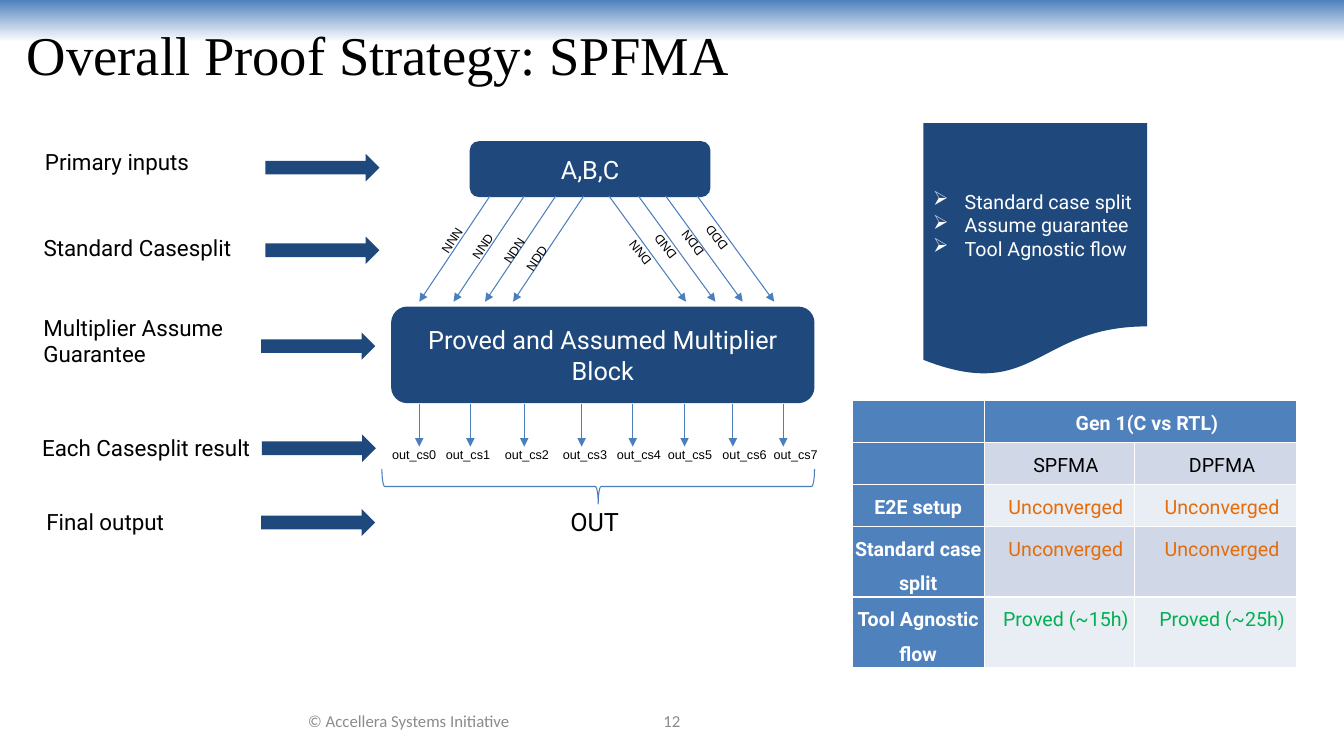
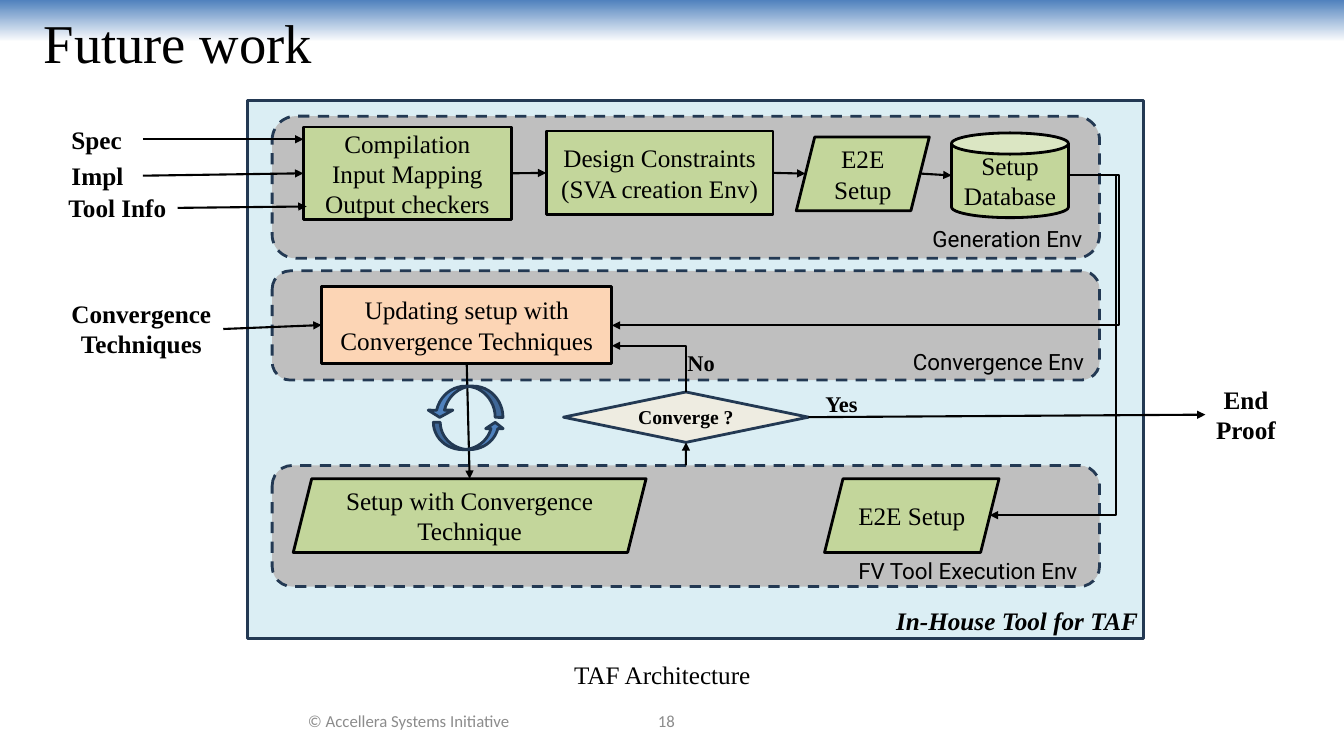
"""Build two slides on a proof strategy and its tool architecture."""
from lxml.etree import SubElement
from pptx import Presentation
from pptx.dml.color import RGBColor
from pptx.enum.dml import MSO_LINE
from pptx.enum.shapes import MSO_CONNECTOR as LINK, MSO_SHAPE as SHAPE
from pptx.enum.text import MSO_ANCHOR as ANCHOR, PP_ALIGN as ALIGN
from pptx.oxml.ns import qn
from pptx.util import Pt

NAVY, BLUE, EDGE, SLATE = "1F497D", "4F81BD", "4B7EBC", "233953"
WHITE, BLACK, GRAY, SILVER = "FFFFFF", "000000", "8C8C8C", "BFBFBF"
GREEN, PEACH, SKY, CREAM = "C3D69B", "FCD5B5", "DBEEF4", "EEECE1"
PALE, PALER, ORANGE, PROVED = "D0D8E8", "E9EDF4", "E46C0A", "00B050"
SANS, SERIF = "Roboto", "Times New Roman"
rgb = RGBColor.from_string


def add_box(slide, kind, place, lines=(), size=18, font=SANS, color=BLACK, bold=False,
            italic=False, fill=None, line=None, weight=2, align=ALIGN.LEFT, anchor=ANCHOR.MIDDLE):
    place = [Pt(length) for length in place]
    if kind is None:
        box = slide.shapes.add_textbox(*place)
    else:
        box = slide.shapes.add_shape(kind, *place)
        box.shadow.inherit = False
        if fill:
            box.fill.solid()
            box.fill.fore_color.rgb = rgb(fill)
        else:
            box.fill.background()
        if line:
            box.line.color.rgb = rgb(line)
            box.line.width = Pt(weight)
        else:
            box.line.fill.background()
    frame = box.text_frame
    frame.word_wrap = True
    frame.vertical_anchor = anchor
    for number, text in enumerate(lines):
        paragraph = frame.add_paragraph() if number else frame.paragraphs[0]
        paragraph.alignment = align
        run = paragraph.add_run()
        run.text = text
        run.font.name, run.font.size = font, Pt(size)
        run.font.bold, run.font.italic = bold, italic
        run.font.color.rgb = rgb(color)
    return box


def add_arrow(slide, start, end, color=BLACK, width=1.5, bend=None):
    joins = [hasattr(tip[0], "shape_id") for tip in (start, end)]
    ends = [Pt(v) for tip, join in zip((start, end), joins) for v in ((0, 0) if join else tip)]
    arrow = slide.shapes.add_connector(LINK.STRAIGHT if bend is None else LINK.ELBOW, *ends)
    if joins[0]:
        arrow.begin_connect(*start)
    if joins[1]:
        arrow.end_connect(*end)
    arrow.line.color.rgb = rgb(color)
    arrow.line.width = Pt(width)
    properties = arrow.element.spPr
    SubElement(properties.find(qn("a:ln")), qn("a:tailEnd"), type="triangle")
    SubElement(properties, qn("a:effectLst"))
    if bend is not None:
        guides = properties.find(qn("a:prstGeom")).get_or_add_avLst()
        SubElement(guides, qn("a:gd"), name="adj1", fmla=f"val {round(bend * 100000)}")


deck = Presentation()
deck.slide_width, deck.slide_height = Pt(960), Pt(540)
slides = []
for heading, title_place, page, page_left in (
        ("Overall Proof Strategy: SPFMA", (12, 11, 864, 55), "12", 388),
        ("Future work", (24, -15, 864, 90), "18", 384)):
    slide = deck.slides.add_slide(deck.slide_layouts[5])
    title = slide.shapes.title
    title.left, title.top, title.width, title.height = [Pt(v) for v in title_place]
    title.text_frame.vertical_anchor = ANCHOR.MIDDLE
    paragraph = title.text_frame.paragraphs[0]
    paragraph.alignment = ALIGN.LEFT
    run = paragraph.add_run()
    run.text = heading
    run.font.name, run.font.size = SERIF, Pt(39)
    run.font.color.rgb = rgb(BLACK)
    for place, text in (((176, 500, 232, 29), "© Accellera Systems Initiative"),
                        ((page_left, 500, 184, 29), page)):
        add_box(slide, None, place, [text], 12, "Calibri", GRAY, align=ALIGN.CENTER)
    slides.append(slide)
strategy, future = slides

band = add_box(strategy, SHAPE.RECTANGLE, (0, 0, 960, 30))
band.fill.gradient()
band.fill.gradient_angle = 270
for stop, color in zip(band.fill.gradient_stops, (BLUE, WHITE)):
    stop.color.rgb = rgb(color)
band.element.nvSpPr.cNvPr.set("id", "20")
deck.slide_master.shapes.element.insert(2, band.element)

for place, text in (((335.5, 100.8, 172, 40), "A,B,C"),
                    ((279.4, 219, 302.4, 69), "Proved and Assumed Multiplier Block")):
    add_box(strategy, SHAPE.FLOWCHART_ALTERNATE_PROCESS, place, [text], color=WHITE,
            fill=NAVY, align=ALIGN.CENTER)

for case, start, left, top in (
        ("NNN", 350, 304, 159), ("NND", 374.5, 326, 163.5),
        ("NDN", 397, 348.5, 166.5), ("NDD", 417, 364.5, 172),
        ("DNN", 435, 433.5, 168.5), ("DND", 456, 451.5, 164),
        ("DDN", 475.5, 471, 161.5), ("DDD", 498, 488, 157.5)):
    positive = case[0] == "N"
    add_arrow(strategy, (start, 140), (start + (-50.5 if positive else 55), 215.5), EDGE, 0.75)
    label = add_box(strategy, None, (left, top, 42, 18), [case], 9, "Arial", anchor=ANCHOR.TOP)
    label.rotation = 303.4 if positive else 231.9

for stage, left, top, width, height, arrow_left, arrow_top in (
        ("Primary inputs", 25, 102, 140, 27, 189.5, 110),
        ("Standard Casesplit", 24, 163.5, 167, 27, 189.5, 169),
        ("Multiplier Assume Guarantee", 24, 220.5, 160, 46, 186.5, 237.5),
        ("Each Casesplit result", 23, 306.5, 190, 27, 187, 310.5),
        ("Final output", 26, 359.5, 118, 27, 186.5, 363.5)):
    add_box(strategy, SHAPE.RIGHT_ARROW, (arrow_left, arrow_top, 81.5, 19.5), fill=NAVY)
    add_box(strategy, None, (left, top, width, height), [stage], 16, anchor=ANCHOR.TOP)

for x in (299.5, 336, 374.5, 415.5, 452, 489, 523.5, 559.5):
    add_arrow(strategy, (x, 288.5), (x, 319), EDGE, 0.75)
results = add_box(strategy, None, (273, 316, 343, 18),
                  ["\t".join(f"out_cs{number}" for number in range(8))], 9, "Arial",
                  anchor=ANCHOR.TOP)
tabs = SubElement(results.text_frame.paragraphs[0]._p.get_or_add_pPr(), qn("a:tabLst"))
for stop in (38.5, 80.5, 122, 160.5, 197, 236, 272.5):
    SubElement(tabs, qn("a:tab"), pos=str(Pt(stop)), algn="l")
brace = add_box(strategy, SHAPE.LEFT_BRACE, (414.8, 193, 25, 309), line=EDGE, weight=0.75)
brace.rotation = 270
add_box(strategy, None, (400.3, 358, 100, 29), ["OUT"], anchor=ANCHOR.TOP)

flow = add_box(strategy, SHAPE.FLOWCHART_DOCUMENT, (659.5, 88, 160, 181),
               ["Standard case split", "Assume guarantee", "Tool Agnostic flow"],
               14, color=WHITE, fill=NAVY)
for paragraph in flow.text_frame.paragraphs:
    properties = paragraph._p.get_or_add_pPr()
    properties.set("marL", str(Pt(22.5)))
    properties.set("indent", str(Pt(-22.5)))
    SubElement(properties, qn("a:buChar"), char="➢")

outcomes = (
    (("", WHITE, BLUE), ("Gen 1(C vs RTL)", WHITE, BLUE), ("", WHITE, BLUE)),
    (("", WHITE, BLUE), ("SPFMA", BLACK, PALE), ("DPFMA", BLACK, PALE)),
    (("E2E setup", WHITE, BLUE), ("Unconverged", ORANGE, PALER), ("Unconverged", ORANGE, PALER)),
    (("Standard case split", WHITE, BLUE), ("Unconverged", ORANGE, PALE),
     ("Unconverged", ORANGE, PALE)),
    (("Tool Agnostic flow", WHITE, BLUE), ("Proved (~15h)", PROVED, PALER),
     ("Proved (~25h)", PROVED, PALER)))
table = strategy.shapes.add_table(5, 3, Pt(608.7), Pt(286), Pt(317.5), Pt(190)).table
table.horz_banding = False
for column, width in zip(table.columns, (94.3, 107.3, 115.9)):
    column.width = Pt(width)
for row, height in zip(table.rows, (30, 30, 30, 50, 50)):
    row.height = Pt(height)
table.cell(0, 1).merge(table.cell(0, 2))
for row, entries in enumerate(outcomes):
    for column, (text, color, fill) in enumerate(entries):
        cell = table.cell(row, column)
        cell.fill.solid()
        cell.fill.fore_color.rgb = rgb(fill)
        if not text:
            continue
        cell.margin_left = cell.margin_right = cell.margin_top = cell.margin_bottom = 0
        paragraph = cell.text_frame.paragraphs[0]
        paragraph.alignment = ALIGN.CENTER
        paragraph.line_spacing = 1.5
        if column:
            paragraph._p.get_or_add_pPr().set("indent", str(Pt(9.4)))
        run = paragraph.add_run()
        run.text = text
        run.font.name, run.font.size = SANS, Pt(14)
        run.font.bold = color == WHITE
        run.font.color.rgb = rgb(color)

add_box(future, SHAPE.RECTANGLE, (177, 72, 640, 384), fill=SKY, line=SLATE)
for name, top, height, left, label_top in (
        ("Generation Env", 83, 101.5, 659, 157), ("Convergence Env", 193.5, 78, 645, 245),
        ("FV Tool Execution Env", 332.5, 86.5, 606, 394.5)):
    environment = add_box(future, SHAPE.ROUNDED_RECTANGLE, (194.4, top, 591, height),
                          fill=SILVER, line=SLATE)
    environment.line.dash_style = MSO_LINE.DASH
    add_box(future, None, (left, label_top, 189, 27), [name], 16, anchor=ANCHOR.TOP)

compilation, constraints, setup, database, updating, technique, execution = [
    add_box(future, kind, place, lines, font=SERIF, fill=fill, line=BLACK, align=ALIGN.CENTER)
    for kind, place, lines, fill in (
        (SHAPE.RECTANGLE, (216.7, 90.7, 148.5, 66.2),
         ["Compilation", "Input Mapping", "Output checkers"], GREEN),
        (SHAPE.RECTANGLE, (390.2, 93.6, 162, 59.8),
         ["Design Constraints", "(SVA creation Env)"], GREEN),
        (SHAPE.PARALLELOGRAM, (568.8, 97.9, 95, 52.6), ["E2E Setup"], GREEN),
        (SHAPE.CAN, (679.7, 95, 83.5, 60.5), ["Setup Database"], GREEN),
        (SHAPE.RECTANGLE, (229.7, 204.5, 207.4, 55.4),
         ["Updating setup with Convergence Techniques"], PEACH),
        (SHAPE.PARALLELOGRAM, (209.5, 342, 252, 52.6),
         ["Setup with Convergence Technique"], GREEN),
        (SHAPE.PARALLELOGRAM, (589, 342, 124.6, 52.6), ["E2E Setup"], GREEN))]
decision = add_box(future, SHAPE.FLOWCHART_DECISION, (402.5, 280, 175, 36), ["Converge ?"], 14,
                   SERIF, bold=True, fill=CREAM, line=SLATE, align=ALIGN.CENTER)

spec, impl, tool_info, techniques, proof, no, yes = [
    add_box(future, None, place, lines, size, SERIF, bold=True, align=align, anchor=ANCHOR.TOP)
    for place, lines, size, align in (
        ((44, 85, 58, 29), ["Spec"], 18, ALIGN.LEFT),
        ((44, 111, 58, 29), ["Impl"], 18, ALIGN.LEFT),
        ((41.8, 134, 85, 29), ["Tool Info"], 18, ALIGN.LEFT),
        ((42.5, 209.5, 117, 51), ["Convergence Techniques"], 18, ALIGN.CENTER),
        ((861, 270.7, 58, 51), ["End", "Proof"], 18, ALIGN.CENTER),
        ((484, 245.5, 45, 27), ["No"], 16, ALIGN.LEFT),
        ((582.5, 275, 45, 27), ["Yes"], 16, ALIGN.LEFT))]
add_box(future, None, (633, 428.5, 240, 29), ["In-House Tool for TAF"], font=SERIF, bold=True,
        italic=True, anchor=ANCHOR.TOP)
add_box(future, None, (403, 467.3, 162, 29), ["TAF Architecture"], font=SERIF, anchor=ANCHOR.TOP)

for start, end in (
        ((spec, 3), (216.7, 99.5)), ((impl, 3), (compilation, 1)),
        ((tool_info, 3), (219, 147.5)), ((techniques, 3), (updating, 1)),
        ((compilation, 3), (constraints, 1)), ((constraints, 3), (575.3, 124)),
        ((657.4, 124), (679.7, 125.3)), ((updating, 2), (335.5, 342)),
        ((environment, 0), (decision, 2)), ((decision, 3), (proof, 1))):
    add_arrow(future, start, end)
for start, end, bend in (((763.2, 125.3), (437.1, 232.5), -0.11),
                         ((763.2, 125.3), (707, 368), -0.61),
                         ((490, 280), (437.1, 247), 0)):
    add_arrow(future, start, end, bend=bend)

for kind, place, bends, flipped in (
        (SHAPE.CURVED_UP_ARROW, (309.6, 301.7, 50.4, 19.5), (0.25, 0.64, 0.23), False),
        (SHAPE.CURVED_DOWN_ARROW, (305.3, 275.8, 54, 22.3), (0.25, 0.79, 0.23), True)):
    cycle = add_box(future, kind, place, fill=BLUE, line=SLATE)
    for number, bend in enumerate(bends):
        cycle.adjustments[number] = bend
    if flipped:
        cycle.element.spPr.xfrm.set("flipH", "1")

deck.save("out.pptx")
